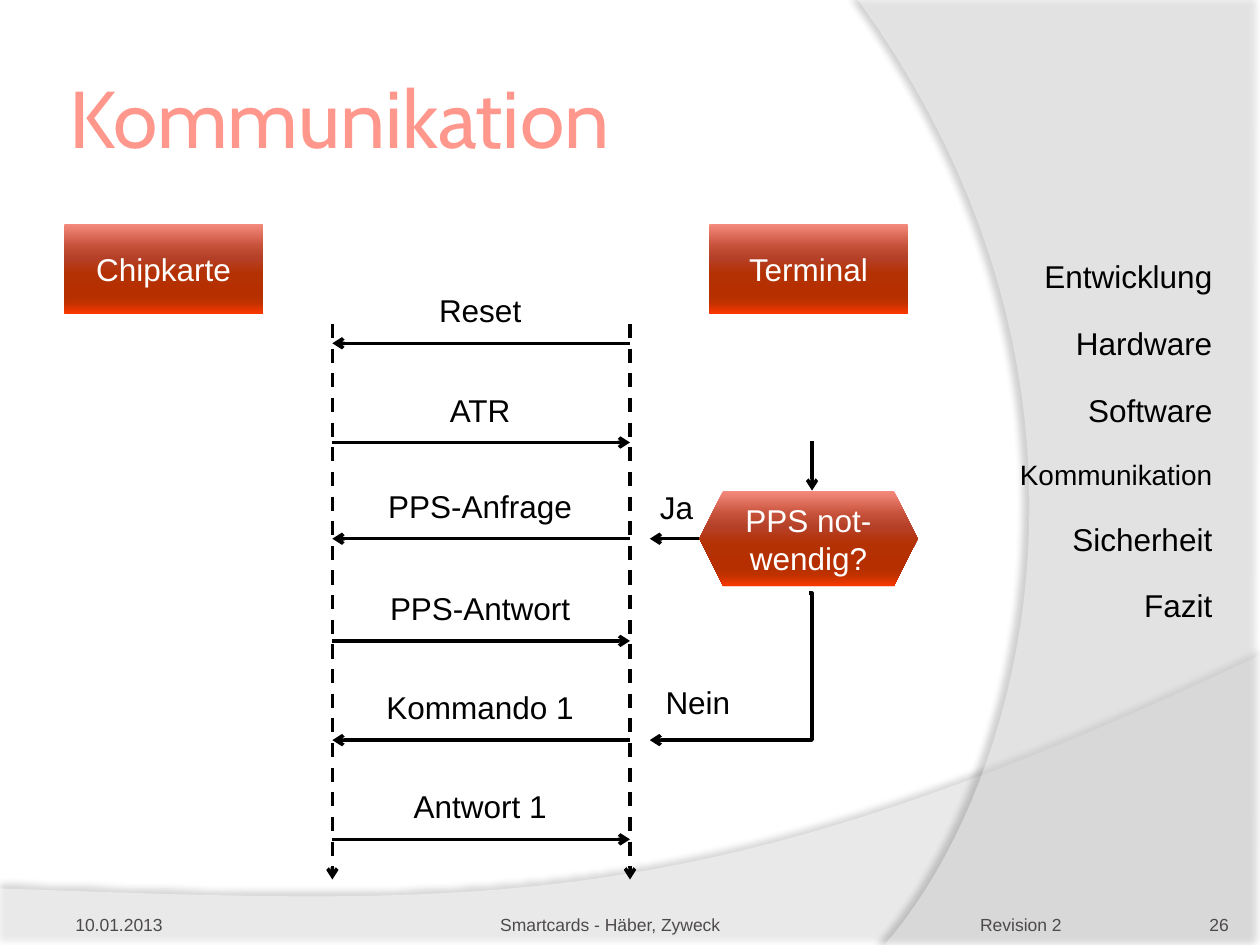
import pptx
import pptx.util
import pptx.oxml
import pptx.oxml.ns
import pptx.dml.color
import pptx.enum.text
import pptx.enum.shapes
import pptx.enum.dml

Cm = pptx.util.Cm
Pt = pptx.util.Pt
RGB = pptx.dml.color.RGBColor
ALIGN = pptx.enum.text.PP_ALIGN
ANCHOR = pptx.enum.text.MSO_ANCHOR
SHAPE = pptx.enum.shapes.MSO_SHAPE
CONN = pptx.enum.shapes.MSO_CONNECTOR
NS = pptx.oxml.ns.nsdecls("a")

BLACK = RGB(0x00, 0x00, 0x00)
WHITE = RGB(0xFF, 0xFF, 0xFF)
SALMON = RGB(0xFF, 0x97, 0x8C)
GREY = RGB(0x4E, 0x4A, 0x4A)
RED_STOPS = [
    (0, RGB(0xF4, 0x8A, 0x7D)), (25, RGB(0xC5, 0x50, 0x38)),
    (38, RGB(0xB5, 0x40, 0x28)), (55, RGB(0xB4, 0x31, 0x03)),
    (80, RGB(0xB6, 0x2F, 0x00)), (88, RGB(0xBF, 0x32, 0x00)),
    (100, RGB(0xFB, 0x37, 0x00)),
]

TITLE = "Kommunikation"
CHAPTERS = ["Entwicklung", "Hardware", "Software", "Kommunikation",
            "Sicherheit", "Fazit"]
FOOTERS = [
    ("10.01.2013", 1.27, 4.42, ALIGN.LEFT, 0.25),
    ("Smartcards - Häber, Zyweck", 6.3, 12, ALIGN.CENTER, 0),
    ("Revision 2", 18.98, 3.2, ALIGN.CENTER, 0),
    ("26", 22.66, 2.11, ALIGN.RIGHT, 0),
]
NODES = [
    ("Chipkarte", SHAPE.RECTANGLE, 1.3, 4.52, 4, 1.8),
    ("Terminal", SHAPE.RECTANGLE, 14.3, 4.52, 4, 1.8),
    ("PPS not-wendig?", SHAPE.HEXAGON, 14.1, 9.9, 4.4, 1.92),
]
CARD_X, TERMINAL_X = 6.7, 12.7
LIFE_TOP, LIFE_END = 6.53, 17.73
MESSAGES = [
    ("Reset", 6.92, "to card"),
    ("ATR", 8.92, "to terminal"),
    ("PPS-Anfrage", 10.86, "to card"),
    ("PPS-Antwort", 12.92, "to terminal"),
    ("Kommando 1", 14.92, "to card"),
    ("Antwort 1", 16.92, "to terminal"),
]
BRANCH_X, DECISION_X = 13.1, 16.37
BRANCH_LABELS = [("Ja", 13.64, 9.58), ("Nein", 14.07, 13.51)]

CURVES = [
    {"outline": [(0, 17.91), (0, 19.08), (25.4, 19.08), (25.4, 13.21)],
     "bezier": [(14.2, 18.52), (9.93, 18.26), (0, 17.91)],
     "opacity": 45, "shadow": (35, 4, 3.5, 270)},
    {"outline": [(25.45, 0), (25.43, 19.05), (17.83, 19.05)],
     "bezier": [(20.73, 15.72), (22.83, 7.62), (17.3, 0)],
     "opacity": 40, "shadow": (45, 4, 4, 180)},
]

prs = pptx.Presentation()
prs.slide_width, prs.slide_height = Cm(25.4), Cm(19.05)
slide = prs.slides.add_slide(prs.slide_layouts[5])
shapes = slide.shapes


def format_text(tf, size, color, align, anchor, font="Arial"):
    tf.vertical_anchor = anchor
    for p in tf.paragraphs:
        p.alignment = align
        for r in p.runs:
            r.font.size = Pt(size)
            r.font.name = font
            r.font.color.rgb = color


def add_text(text, x, y, w, h, size, color, align, anchor):
    tf = shapes.add_textbox(Cm(x), Cm(y), Cm(w), Cm(h)).text_frame
    tf.word_wrap = True
    tf.text = text
    format_text(tf, size, color, align, anchor)
    return tf


def add_label(text, center_x, y, w):
    tf = add_text(text, center_x - w / 2, y, w, 1.27, 18, BLACK,
                  ALIGN.CENTER, ANCHOR.MIDDLE)
    tf.paragraphs[0].space_before = Pt(4.5)


def add_arrow(x1, y1, x2, y2, kind=CONN.STRAIGHT, dashed=False):
    c = shapes.add_connector(kind, Cm(x1), Cm(y1), Cm(x2), Cm(y2))
    c.line.color.rgb = BLACK
    c.line.width = Pt(2)
    if dashed:
        c.line.dash_style = pptx.enum.dml.MSO_LINE.DASH
    c.line._get_or_add_ln().append(
        pptx.oxml.parse_xml(f'<a:tailEnd {NS} type="arrow"/>'))
    c._element.spPr.append(pptx.oxml.parse_xml(f"<a:effectLst {NS}/>"))
    return c


def add_curve(outline, bezier, opacity, shadow):
    p0, (p1, p2, p3) = outline[-1], bezier
    steps = 40
    points = list(outline)
    for i in range(1, steps + 1):
        t = i / steps
        points.append(tuple(
            (1 - t) ** 3 * a + 3 * (1 - t) ** 2 * t * b
            + 3 * (1 - t) * t ** 2 * c + t ** 3 * d
            for a, b, c, d in zip(p0, p1, p2, p3)))
    points = [(Cm(x), Cm(y)) for x, y in points]
    builder = shapes.build_freeform(*points[0])
    builder.add_line_segments(points[1:], close=True)
    sp = builder.convert_to_shape()
    sp.fill.solid()
    sp.fill.fore_color.rgb = WHITE
    sp.line.fill.background()
    sp.shadow.inherit = False
    spPr = sp._element.spPr
    spPr.find(".//" + pptx.oxml.ns.qn("a:srgbClr")).append(
        pptx.oxml.parse_xml(f'<a:alpha {NS} val="{opacity * 1000}"/>'))
    alpha, blur, dist, angle = shadow
    spPr.find(pptx.oxml.ns.qn("a:effectLst")).append(pptx.oxml.parse_xml(
        f'<a:outerShdw {NS} blurRad="{Pt(blur)}" dist="{Pt(dist)}" '
        f'dir="{angle * 60000}" algn="ctr" rotWithShape="0">'
        f'<a:srgbClr val="{BLACK}"><a:alpha val="{alpha * 1000}"/>'
        f'</a:srgbClr></a:outerShdw>'))


def add_node(text, kind, x, y, w, h):
    sp = shapes.add_shape(kind, Cm(x), Cm(y), Cm(w), Cm(h))
    sp.shadow.inherit = False
    sp.line.fill.background()
    sp.fill.gradient()
    sp.fill.gradient_angle = 270
    stops = sp._element.spPr.find(".//" + pptx.oxml.ns.qn("a:gsLst"))
    for gs in list(stops):
        stops.remove(gs)
    for pos, color in RED_STOPS:
        stops.append(pptx.oxml.parse_xml(
            f'<a:gs {NS} pos="{pos * 1000}"><a:srgbClr val="{color}"/></a:gs>'))
    sp.text_frame.text = text
    format_text(sp.text_frame, 18, WHITE, ALIGN.CENTER, ANCHOR.MIDDLE)


for curve in CURVES:
    add_curve(**curve)

title = shapes.title
title.left, title.top, title.width, title.height = (
    Cm(1.27), Cm(0.76), Cm(18.44), Cm(3.18))
tf = title.text_frame
tf.text = TITLE
tf.margin_left = tf.margin_right = tf.margin_top = tf.margin_bottom = Cm(0.13)
format_text(tf, 46, SALMON, ALIGN.LEFT, ANCHOR.MIDDLE, "Cabin")

tf = add_text("\n".join(CHAPTERS), 20.14, 0.73, 4.55, 16.31, 18, BLACK,
              ALIGN.RIGHT, ANCHOR.MIDDLE)
for p in tf.paragraphs:
    p.space_before, p.space_after = Pt(4.5), Pt(12)
    if p.text == TITLE:
        p.runs[0].font.size = Pt(16)

for text, x, w, align, margin in FOOTERS:
    tf = add_text(text, x, 17.83, w, 1.02, 10, GREY, align, ANCHOR.BOTTOM)
    tf.margin_left = tf.margin_right = Cm(margin)
    tf.margin_bottom = 0

for node in NODES:
    add_node(*node)

for x in (CARD_X, TERMINAL_X):
    add_arrow(x, LIFE_TOP, x, LIFE_END, dashed=True)

for text, y, direction in MESSAGES:
    start, end = CARD_X, TERMINAL_X
    if direction == "to card":
        start, end = end, start
    add_arrow(start, y, end, y)
    add_label(text, (CARD_X + TERMINAL_X) / 2 - 0.02, y - 1.3, 5)

add_arrow(DECISION_X, 8.89, DECISION_X, 9.89)
add_arrow(14.1, 10.86, BRANCH_X, 10.86)
elbow = add_arrow(DECISION_X - 0.05, 11.96, BRANCH_X, 14.92, CONN.ELBOW)
elbow._element.spPr.prstGeom.get_or_add_avLst().append(
    pptx.oxml.parse_xml(f'<a:gd {NS} name="adj1" fmla="val -1600"/>'))
for text, x, y in BRANCH_LABELS:
    add_label(text, x, y, 2)

prs.save("out.pptx")
